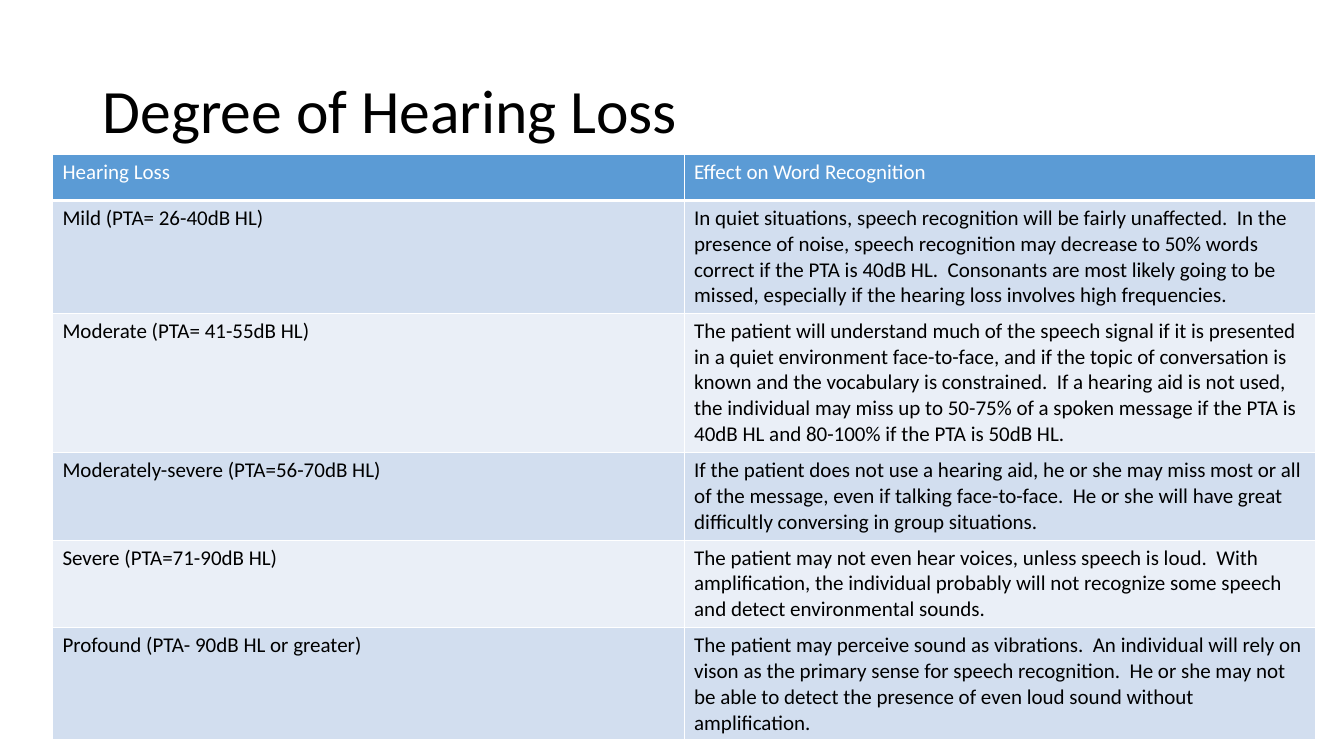
from lxml import etree
from pptx import Presentation
from pptx import util as u
from pptx.dml import color
from pptx.enum import text
from pptx.oxml import ns

WIDTH, HEIGHT = 13.33, 7.5
FONT = "Calibri"
BLACK, WHITE = "000000", "FFFFFF"
HEADER_FILL, BANDS = "5B9BD5", ("D2DEEF", "EAEFF7")
TITLE_BOX = (0.92, 0.4, 11.5, 1.45)
TABLE_BOX = (0.52, 1.53, 12.53, 5.81)

HEARING_LEVELS = [
    (0.46, "Hearing Loss", "Effect on Word Recognition"),
    (1.12, "Mild (PTA= 26-40dB HL)",
     "In quiet situations, speech recognition will be fairly unaffected.  "
     "In the presence of noise, speech recognition may decrease to 50% words "
     "correct if the PTA is 40dB HL.  Consonants are most likely going to be "
     "missed, especially if the hearing loss involves high frequencies."),
    (1.38, "Moderate (PTA= 41-55dB HL)",
     "The patient will understand much of the speech signal if it is presented "
     "in a quiet environment face-to-face, and if the topic of conversation is "
     "known and the vocabulary is constrained.  If a hearing aid is not used, "
     "the individual may miss up to 50-75% of a spoken message if the PTA is "
     "40dB HL and 80-100% if the PTA is 50dB HL."),
    (0.87, "Moderately-severe (PTA=56-70dB HL)",
     "If the patient does not use a hearing aid, he or she may miss most or all "
     "of the message, even if talking face-to-face.  He or she will have great "
     "difficultly conversing in group situations."),
    (0.87, "Severe (PTA=71-90dB HL)",
     "The patient may not even hear voices, unless speech is loud.  With "
     "amplification, the individual probably will not recognize some speech "
     "and detect environmental sounds."),
    (1.11, "Profound (PTA- 90dB HL or greater)",
     "The patient may perceive sound as vibrations.  An individual will rely on "
     "vison as the primary sense for speech recognition.  He or she may not "
     "be able to detect the presence of even loud sound without amplification."),
]


def paint(target, hex_color):
    target.rgb = color.RGBColor.from_string(hex_color)


def write(frame, words, size, hex_color):
    frame.text = words
    for para in frame.paragraphs:
        for span in para.runs:
            span.font.name = FONT
            span.font.size = u.Pt(size)
            paint(span.font.color, hex_color)


def border(cell, bottom_width):
    properties = cell._tc.get_or_add_tcPr()
    for side, width in (("L", 1), ("R", 1), ("T", 1), ("B", bottom_width)):
        line = etree.SubElement(properties, ns.qn(f"a:ln{side}"), w=str(u.Pt(width)))
        fill = etree.SubElement(line, ns.qn("a:solidFill"))
        etree.SubElement(fill, ns.qn("a:srgbClr"), val=WHITE)


def add_title(page, box, words):
    frame = page.shapes.add_textbox(*map(u.Inches, box)).text_frame
    frame.word_wrap = True
    frame.vertical_anchor = text.MSO_ANCHOR.MIDDLE
    write(frame, words, 44, BLACK)
    frame.paragraphs[0].line_spacing = 0.9


def add_level_table(page, box, levels):
    table = page.shapes.add_table(len(levels), 2, *map(u.Inches, box)).table
    share = box[3] / sum(level[0] for level in levels)
    for column in table.columns:
        column.width = u.Inches(box[2] / 2)
    for index, (height, *words) in enumerate(levels):
        header = index == 0
        table.rows[index].height = u.Inches(height * share)
        for cell, content in zip(table.rows[index].cells, words):
            write(cell.text_frame, content, 15, WHITE if header else BLACK)
            border(cell, 3 if header else 1)
            cell.fill.solid()
            paint(cell.fill.fore_color, HEADER_FILL if header else BANDS[(index - 1) % 2])


def main():
    deck = Presentation()
    deck.slide_width, deck.slide_height = u.Inches(WIDTH), u.Inches(HEIGHT)
    page = deck.slides.add_slide(deck.slide_layouts[6])
    page.background.fill.solid()
    paint(page.background.fill.fore_color, WHITE)
    add_title(page, TITLE_BOX, "Degree of Hearing Loss")
    add_level_table(page, TABLE_BOX, HEARING_LEVELS)
    deck.save("out.pptx")


if __name__ == "__main__":
    main()
